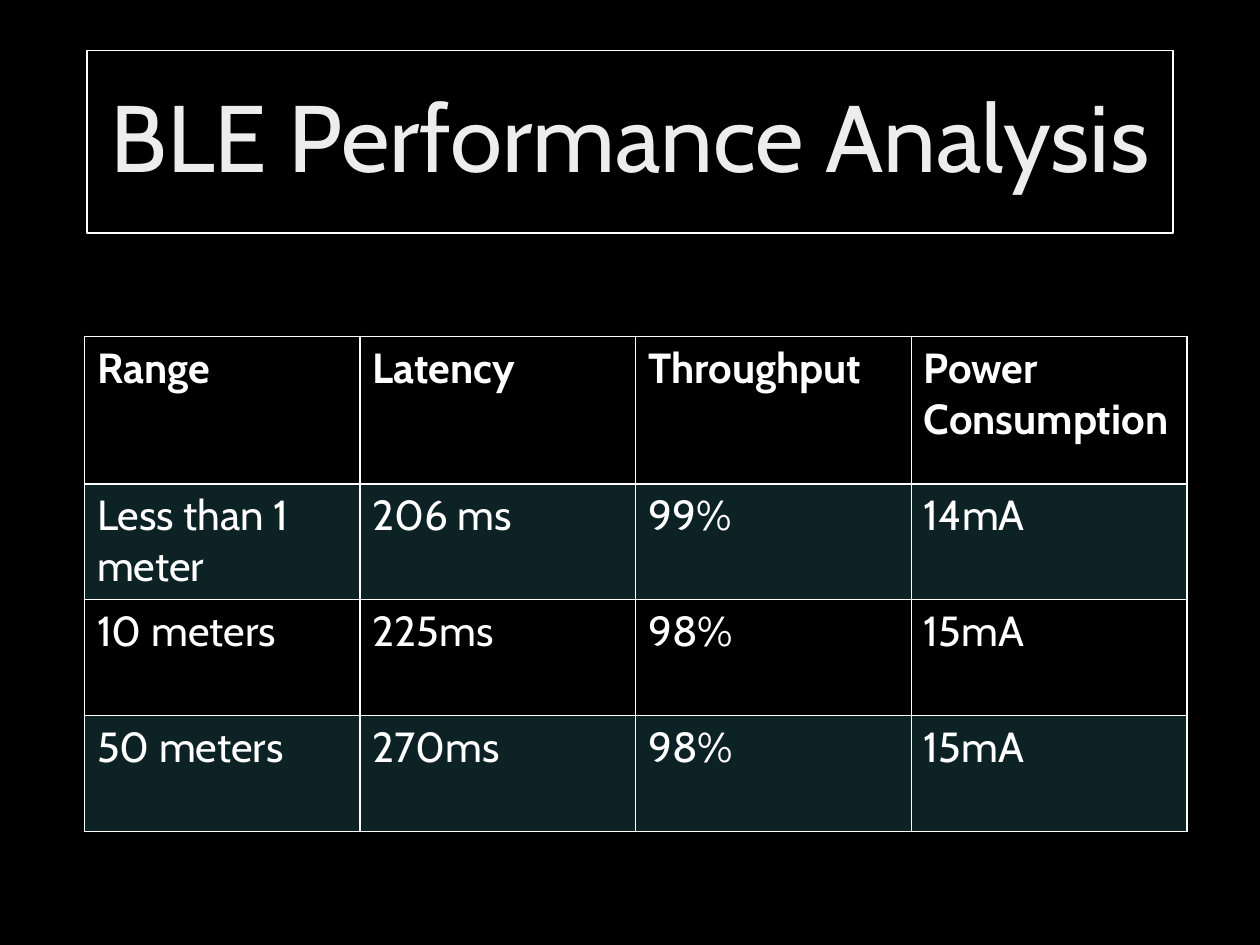
import pptx
import pptx.util
import pptx.dml.color
import pptx.enum.shapes
import pptx.enum.text
import pptx.oxml
import pptx.oxml.ns

WIDE, HIGH = 10, 7.5
FONT = "Cabin"
HUES = {"back": "000000", "line": "FFFFFF", "text": "FFFFFF", "title": "EDEDED", "band": "41AEBD"}
BAND_SHARE = 20
ROWS = [
    ["Range", "Latency", "Throughput", "Power Consumption"],
    ["Less than 1 meter", "206 ms", "99%", "14mA"],
    ["10 meters", "225ms", "98%", "15mA"],
    ["50 meters", "270ms", "98%", "15mA"],
]
TALL = [1.17, 0.92, 0.92, 0.92]


def hue(name):
    """Return the named colour."""
    return pptx.dml.color.RGBColor.from_string(HUES[name])


def area(left, top, wide, high):
    """Turn shares of the slide's size into lengths."""
    return [pptx.util.Inches(round(share * side, 2))
            for share, side in zip((left, top, wide, high), (WIDE, HIGH) * 2)]


def write(frame, text, size=24, bold=False, tint="text", align=None, space=None):
    """Put one formatted paragraph in a text frame."""
    frame.word_wrap = True
    para = frame.paragraphs[0]
    para.alignment = align
    para.line_spacing = space
    run = para.add_run()
    run.text = text
    run.font.name = FONT
    run.font.size = pptx.util.Pt(size)
    run.font.bold = bold
    run.font.color.rgb = hue(tint)


def edge(cell):
    """Draw thin lines on all four sides of a cell."""
    props = cell._tc.get_or_add_tcPr()
    for spot, side in enumerate("LRTB"):
        props.insert(spot, pptx.oxml.parse_xml(
            f'<a:ln{side} {pptx.oxml.ns.nsdecls("a")} w="{pptx.util.Pt(1)}"><a:solidFill>'
            f'<a:srgbClr val="{HUES["line"]}"/></a:solidFill></a:ln{side}>'))


def shade(cell, band):
    """Give a cell a sheer band colour or no fill."""
    if not band:
        cell.fill.background()
        return
    cell.fill.solid()
    cell.fill.fore_color.rgb = hue("band")
    tone = cell._tc.tcPr.find(".//" + pptx.oxml.ns.qn("a:srgbClr"))
    tone.append(pptx.oxml.parse_xml(
        f'<a:alpha {pptx.oxml.ns.nsdecls("a")} val="{BAND_SHARE * 1000}"/>'))


def head(slide, box, text):
    """Place the framed title."""
    shape = slide.shapes.add_shape(pptx.enum.shapes.MSO_SHAPE.RECTANGLE, *box)
    shape.shadow.inherit = False
    shape.fill.background()
    shape.line.color.rgb = hue("line")
    shape.line.width = pptx.util.Pt(0.75)
    shape.text_frame.vertical_anchor = pptx.enum.text.MSO_ANCHOR.MIDDLE
    write(shape.text_frame, text, size=54, tint="title",
          align=pptx.enum.text.PP_ALIGN.CENTER, space=0.9)


def grid(slide, box, rows):
    """Place the table with even columns and banded rows."""
    table = slide.shapes.add_table(len(rows), len(rows[0]), *box).table
    table.first_row = table.horz_banding = False
    for col in table.columns:
        col.width = box[2] // len(rows[0])
    for r, (row, tall) in enumerate(zip(rows, TALL)):
        table.rows[r].height = int(box[3] * tall / sum(TALL))
        for c, text in enumerate(row):
            cell = table.cell(r, c)
            write(cell.text_frame, text, bold=r == 0)
            shade(cell, r % 2 == 1)
            edge(cell)


def main():
    """Build the slide and save it."""
    deck = pptx.Presentation()
    deck.slide_width = pptx.util.Inches(WIDE)
    deck.slide_height = pptx.util.Inches(HIGH)
    slide = deck.slides.add_slide(deck.slide_layouts[6])
    slide.background.fill.solid()
    slide.background.fill.fore_color.rgb = hue("back")
    head(slide, area(0.069, 0.4 / HIGH, 0.862, 1.45 / HIGH), "BLE Performance Analysis")
    grid(slide, area(0.067, 2.67 / HIGH, 0.875, sum(TALL) / HIGH), ROWS)
    deck.save("out.pptx")


if __name__ == "__main__":
    main()
